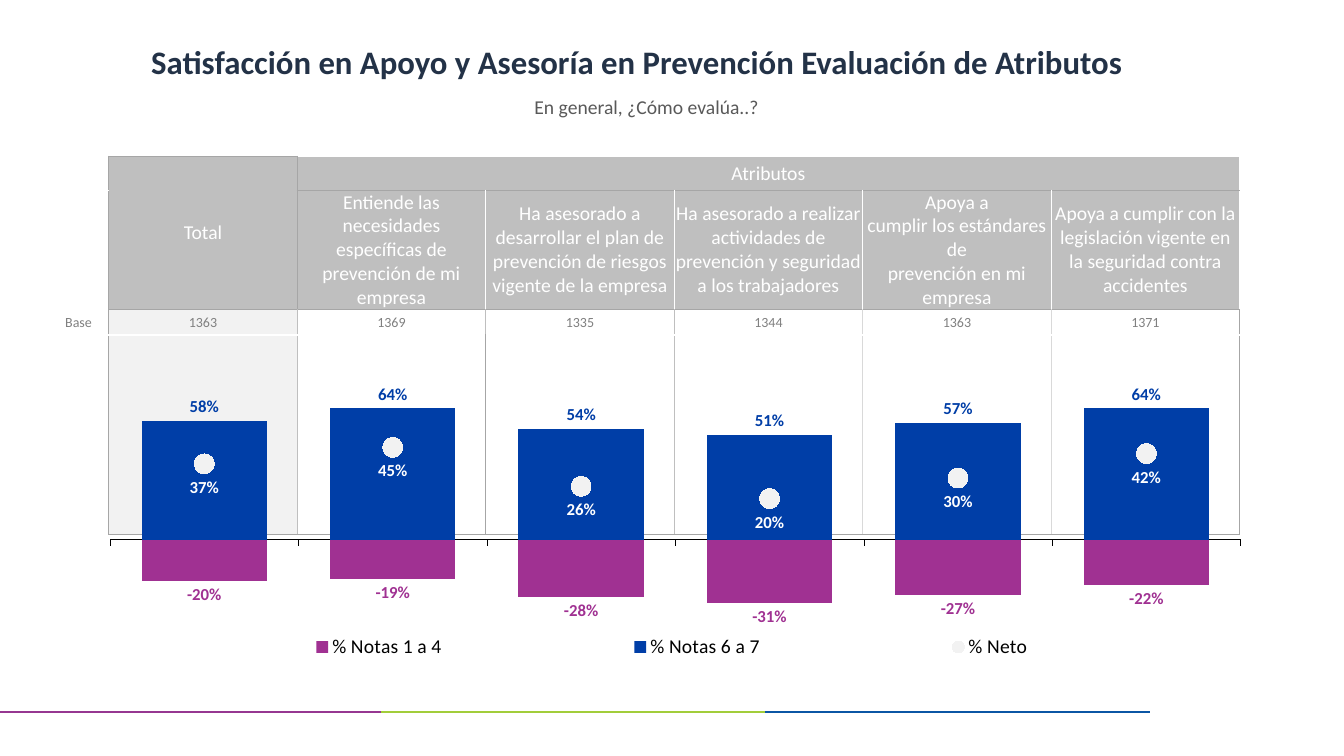
from dataclasses import dataclass
from lxml.etree import SubElement as Sub
from pptx import Presentation
from pptx.chart.data import CategoryChartData as Data
from pptx.dml.color import RGBColor
from pptx.enum.chart import (XL_CHART_TYPE as Kind, XL_LABEL_POSITION as Spot,
                             XL_LEGEND_POSITION as Side, XL_MARKER_STYLE as Mark,
                             XL_TICK_LABEL_POSITION as Tick, XL_TICK_MARK as Dash)
from pptx.enum.shapes import MSO_CONNECTOR as Link
from pptx.enum.text import MSO_ANCHOR as Anchor, PP_ALIGN as Align
from pptx.oxml.ns import qn
from pptx.slide import Slide
from pptx.util import Cm, Pt

EDGE = {"W": "FFFFFF", "A": "A6A6A6", "B": "BFBFBF", "D": "D9D9D9"}
SIDES = ["WAAWWWWW", "WAAWWWWW", "WABBBDDA", "WABABDDA"]
LEVELS = ["WWWWW", "AAAWA"] + ["WAAWA"] * 5
HEADS = [
    "Entiende las necesidades específicas de prevención de mi empresa",
    "Ha asesorado a desarrollar el plan de prevención de riesgos vigente de la empresa",
    "Ha asesorado a realizar actividades de prevención y seguridad a los trabajadores",
    "Apoya a\ncumplir los estándares de\nprevención en mi empresa",
    "Apoya a cumplir con la legislación vigente en la seguridad contra accidentes",
]
ROWS = [
    ["", "Total", "Atributos", "", "", "", ""],
    ["", ""] + HEADS,
    ["Base", "1363", "1369", "1335", "1344", "1363", "1371"],
    [""] * 7,
]
WIDTHS = [1.52] + [4.75] * 6
HEIGHTS = [0.81, 2.79, 0.64, 5.03]
SERIES = [
    ("% Notas 1 a 4", [-0.2, -0.19, -0.28, -0.31, -0.27, -0.22], "A03192"),
    ("% Notas 6 a 7", [0.58, 0.64, 0.54, 0.51, 0.57, 0.64], "003EA7"),
    ("% Neto", [0.37, 0.45, 0.26, 0.2, 0.3, 0.42], "F2F2F2"),
]


def color(code):
    return RGBColor.from_string(code)


def layout(parent, index, box, inner=False):
    for old in parent.findall(qn("c:layout")):
        parent.remove(old)
    node = Sub(parent, qn("c:layout"))
    parent.insert(index, node)
    frame = Sub(node, qn("c:manualLayout"))
    if inner:
        Sub(frame, qn("c:layoutTarget"), val="inner")
    for key in ("xMode", "yMode"):
        Sub(frame, qn("c:" + key), val="edge")
    for key, val in zip("xywh", box):
        Sub(frame, qn("c:" + key), val=str(val))


@dataclass
class Page:
    """Draws styled elements on the current slide."""
    slide: Slide
    face: str = "Calibri"

    def style(self, font, size, code, bold=False):
        font.name, font.size, font.bold = self.face, Pt(size), bold
        font.color.rgb = color(code)

    def line(self, start, end, y, code):
        rule = self.slide.shapes.add_connector(Link.STRAIGHT, Cm(start), Cm(y), Cm(end), Cm(y))
        rule.line.color.rgb, rule.line.width = color(code), Pt(1.5)
        Sub(rule._element.spPr, qn("a:effectLst"))

    def text(self, box, words, size, code, bold=False, anchor=Anchor.TOP, space=1.0):
        frame = self.slide.shapes.add_textbox(*map(Cm, box)).text_frame
        frame.word_wrap, frame.vertical_anchor = True, anchor
        para = frame.paragraphs[0]
        para.text, para.alignment, para.line_spacing = words, Align.CENTER, space
        self.style(para.font, size, code, bold)

    def border(self, cell, codes):
        props = cell._tc.get_or_add_tcPr()
        for side, code in zip("LRTB", codes):
            edge = Sub(props, qn("a:ln" + side), w=str(Pt(1)))
            fill = Sub(edge, qn("a:solidFill"))
            Sub(fill, qn("a:srgbClr"), val=EDGE[code])

    def cell(self, cell, row, col, words):
        self.border(cell, SIDES[row][col:col + 2] + LEVELS[col][row:row + 2])
        if col and row < 2 or col == 1:
            cell.fill.solid()
            cell.fill.fore_color.rgb = color("BFBFBF" if row < 2 else "F2F2F2")
        else:
            cell.fill.background()
        cell.text = words
        if row or not words:
            cell.margin_left = cell.margin_right = Cm(0.03)
            cell.margin_top = cell.margin_bottom = 0
        cell.vertical_anchor = Anchor.TOP if words == "Atributos" else Anchor.MIDDLE
        head = row < 2 and words
        for para in cell.text_frame.paragraphs:
            para.alignment = Align.CENTER
            self.style(para.font, 14 if head else 10, "FFFFFF" if head else "808080")

    def table(self, left, top):
        grid = self.slide.shapes.add_table(len(HEIGHTS), len(WIDTHS), Cm(left), Cm(top),
                                           Cm(sum(WIDTHS)), Cm(sum(HEIGHTS))).table
        grid.first_row = grid.horz_banding = False
        for col, width in zip(grid.columns, WIDTHS):
            col.width = Cm(width)
        for row, height in zip(grid.rows, HEIGHTS):
            row.height = Cm(height)
        for r, row in enumerate(ROWS):
            for c, words in enumerate(row):
                self.cell(grid.cell(r, c), r, c, words)
        grid.cell(0, 1).merge(grid.cell(1, 1))
        grid.cell(0, 2).merge(grid.cell(0, 6))

    def labels(self, series, code, spot):
        tags = series.data_labels
        tags.show_value, tags.position = True, spot
        tags.number_format, tags.number_format_is_linked = "0%", False
        self.style(tags.font, 12, code, True)

    def split(self, chart):
        bars = chart.plots[0]._element
        area = bars.getparent()
        curve = Sub(area, qn("c:lineChart"))
        bars.addnext(curve)
        Sub(curve, qn("c:grouping"), val="standard")
        Sub(curve, qn("c:varyColors"), val="0")
        last = bars.findall(qn("c:ser"))[-1]
        for flag in last.findall(qn("c:invertIfNegative")):
            last.remove(flag)
        curve.append(last)
        Sub(curve, qn("c:marker"), val="1")
        for axis in bars.findall(qn("c:axId")):
            Sub(curve, qn("c:axId"), val=axis.get("val"))
        layout(area, 0, (0.047, 0.107, 0.953, 0.739), True)

    def axes(self, chart):
        cats, vals = chart.category_axis, chart.value_axis
        cats.tick_label_position, cats.major_tick_mark = Tick.NONE, Dash.OUTSIDE
        cats.format.line.color.rgb, cats.format.line.width = color("000000"), Pt(0.25)
        vals.minimum_scale, vals.maximum_scale, vals.major_unit = -0.6, 1, 0.2
        vals.has_major_gridlines = vals.visible = False
        vals.tick_labels.number_format = "0%"
        vals.tick_labels.number_format_is_linked = False

    def chart(self, box):
        data = Data(number_format="0%")
        data.categories = list("123456")
        for name, vals, _ in SERIES:
            data.add_series(name, vals)
        chart = self.slide.shapes.add_chart(Kind.COLUMN_CLUSTERED, *map(Cm, box), data).chart
        self.style(chart.font, 13.7, "000000", True)
        chart.font.name = "TeX Gyre Adventor"
        chart.has_title = False
        self.split(chart)
        self.axes(chart)
        bars, dots = chart.plots
        bars.gap_width, bars.overlap, bars.vary_by_categories = 50, 100, False
        for series, (_, _, code) in zip(bars.series, SERIES):
            series.invert_if_negative = False
            series.format.fill.solid()
            series.format.fill.fore_color.rgb = color(code)
            self.labels(series, code, Spot.OUTSIDE_END)
        net = dots.series[0]
        net.smooth = False
        net.format.line.fill.background()
        net.marker.style, net.marker.size = Mark.CIRCLE, 14
        net.marker.format.fill.solid()
        net.marker.format.fill.fore_color.rgb = color(SERIES[-1][2])
        net.marker.format.line.fill.background()
        self.labels(net, "FFFFFF", Spot.BELOW)
        chart.has_legend = True
        chart.legend.position, chart.legend.include_in_layout = Side.LEFT, False
        self.style(chart.legend.font, 14, "000000")
        layout(chart.legend._element, 1, (0.064, 0.771, 0.913, 0.08))


def main():
    deck = Presentation()
    deck.slide_width, deck.slide_height = Cm(33.87), Cm(19.05)
    page = Page(deck.slides.add_slide(deck.slide_layouts[6]))
    for start, end, code in [(0, 9.68, "963791"), (9.6, 19.28, "A2CD3A"), (19.28, 28.98, "0B56A4")]:
        page.line(start, end, 17.93, code)
    page.table(1.22, 3.94)
    page.chart((1.37, 7.24, 29.9, 11.18))
    page.text((2.34, 0.84, 27.41, 1.55),
              "Satisfacción en Apoyo y Asesoría en Prevención Evaluación de Atributos",
              23.4, "233247", True, Anchor.MIDDLE, 0.9)
    page.text((2.59, 2.26, 27.41, 1.45), "En general, ¿Cómo evalúa..?", 14, "595959")
    deck.save("out.pptx")


if __name__ == "__main__":
    main()
